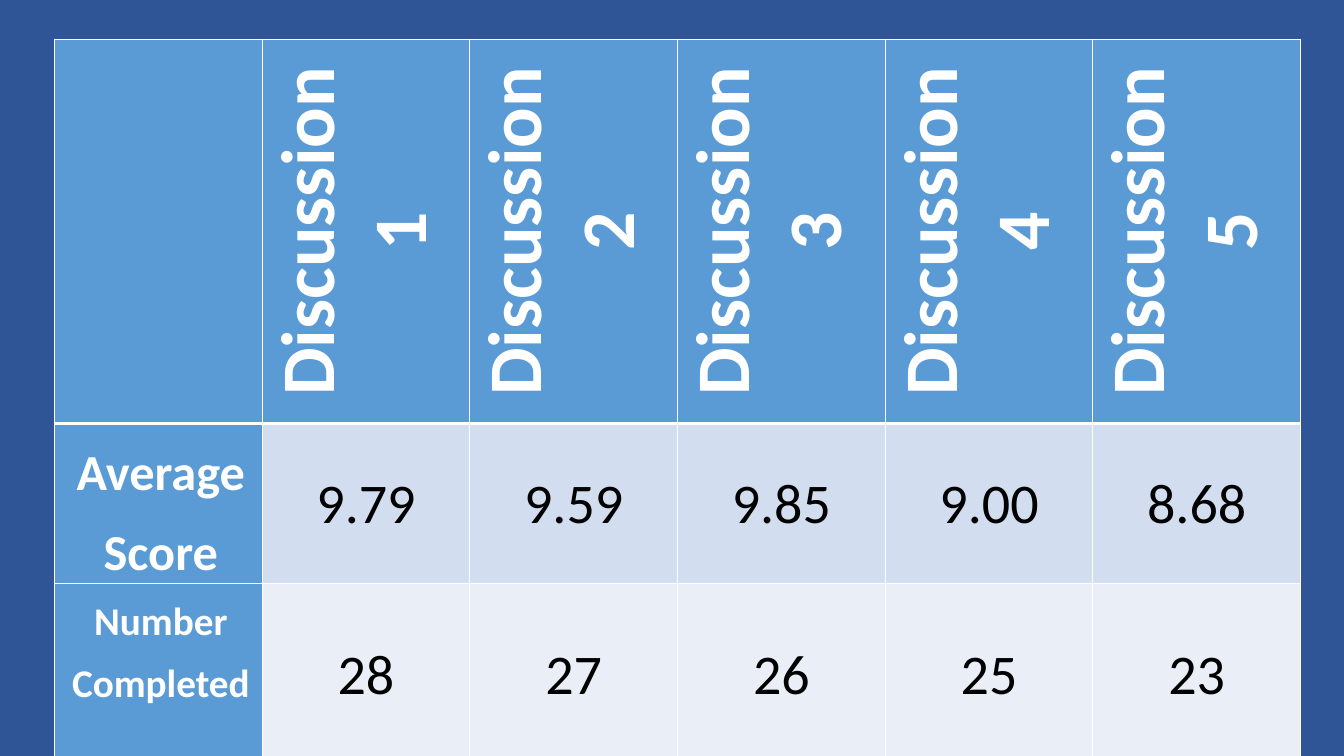
from dataclasses import dataclass

from lxml import etree
from pptx import Presentation
from pptx import util as u
from pptx.dml.color import RGBColor
from pptx.enum import text
from pptx.oxml import ns


@dataclass(frozen=True)
class Theme:
    font: str = "Calibri"
    background: str = "2F5597"
    header: str = "5B9BD5"
    bands: tuple = ("D2DEEF", "EAEFF7")
    light: str = "FFFFFF"
    dark: str = "000000"
    header_size: int = 54
    label_sizes: tuple = (36, 28)
    value_size: int = 40
    rule: int = 1
    heavy_rule: int = 3


class Deck:
    def __init__(self, theme):
        self.theme = theme
        self.prs = Presentation()
        self.prs.slide_width = u.Inches(13.33)
        self.prs.slide_height = u.Inches(7.5)
        self.slide = self.prs.slides.add_slide(self.prs.slide_layouts[6])
        fill = self.slide.background.fill
        fill.solid()
        fill.fore_color.rgb = RGBColor.from_string(theme.background)

    def table(self, left, top, col_width, row_heights, col_count):
        frame = self.slide.shapes.add_table(
            len(row_heights), col_count, u.Inches(left), u.Inches(top),
            u.Inches(col_width * col_count), u.Inches(sum(row_heights)))
        table = frame.table
        for col in table.columns:
            col.width = u.Inches(col_width)
        for row, height in zip(table.rows, row_heights):
            row.height = u.Inches(height)
        return table

    def borders(self, cell, top, bottom):
        tc_pr = cell._tc.get_or_add_tcPr()
        rule = self.theme.rule
        for i, (side, width) in enumerate(
                (("L", rule), ("R", rule), ("T", top), ("B", bottom))):
            ln = etree.Element(ns.qn(f"a:ln{side}"), w=str(u.Pt(width)))
            fill = etree.SubElement(ln, ns.qn("a:solidFill"))
            etree.SubElement(fill, ns.qn("a:srgbClr"), val=self.theme.light)
            tc_pr.insert(i, ln)

    def cell(self, cell, words, fill, size, color, bold, insets):
        cell.fill.solid()
        cell.fill.fore_color.rgb = RGBColor.from_string(fill)
        (cell.margin_left, cell.margin_top,
         cell.margin_right, cell.margin_bottom) = map(u.Inches, insets)
        p = cell.text_frame.paragraphs[0]
        if words:
            p.text = words
            p.alignment = text.PP_ALIGN.CENTER
            p.font.name = self.theme.font
            p.font.size = u.Pt(size)
            p.font.bold = bold
            p.font.color.rgb = RGBColor.from_string(color)
        return p

    def header(self, cell, words):
        t = self.theme
        self.cell(cell, words, t.header, t.header_size, t.light, True, (0.07, 0, 0.07, 0))
        self.borders(cell, t.rule, t.heavy_rule)
        if words:
            cell.vertical_anchor = text.MSO_ANCHOR.MIDDLE
            cell._tc.get_or_add_tcPr().set("vert", "vert270")

    def label(self, cell, words, size, top):
        t = self.theme
        p = self.cell(cell, words, t.header, size, t.light, True, (0.07, 0, 0.07, 0))
        p.line_spacing = 1.3
        p_pr = p._p.get_or_add_pPr()
        p_pr.set("marL", str(u.Inches(0.05)))
        p_pr.set("indent", "0")
        self.borders(cell, top, t.rule)

    def value(self, cell, words, fill, top):
        t = self.theme
        self.cell(cell, words, fill, t.value_size, t.dark, False, (0.01, 0.01, 0.01, 0))
        cell.vertical_anchor = text.MSO_ANCHOR.MIDDLE
        self.borders(cell, top, t.rule)


def main():
    theme = Theme()
    deck = Deck(theme)
    scores = (
        ("Average Score", ("9.79", "9.59", "9.85", "9.00", "8.68")),
        ("Number Completed", ("28", "27", "26", "25", "23")),
    )
    headings = [""] + [f"Discussion {n}" for n in range(1, 6)]
    table = deck.table(0.54, 0.39, 2.06, (3.32, 1.38, 1.81), len(headings))
    for c, heading in enumerate(headings):
        deck.header(table.cell(0, c), heading)
    tops = (theme.heavy_rule, theme.rule)
    rows = zip(scores, theme.label_sizes, theme.bands, tops)
    for r, ((label, values), size, band, top) in enumerate(rows, 1):
        deck.label(table.cell(r, 0), label, size, top)
        for c, value in enumerate(values, 1):
            deck.value(table.cell(r, c), value, band, top)
    deck.prs.save("out.pptx")


if __name__ == "__main__":
    main()
